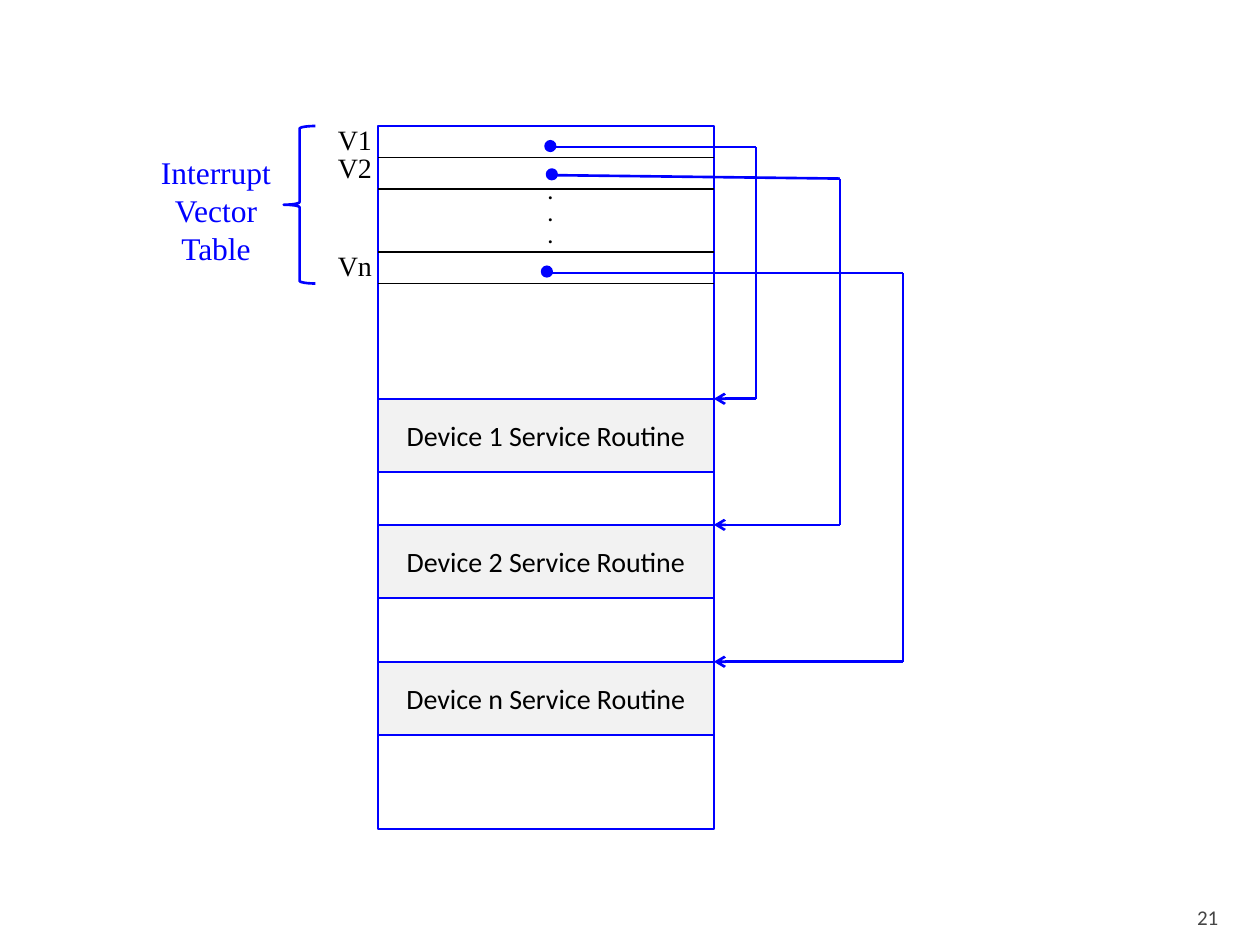
from lxml import etree
from pptx import Presentation
from pptx.dml.color import RGBColor
from pptx.enum.shapes import MSO_CONNECTOR, MSO_SHAPE
from pptx.enum.text import MSO_ANCHOR, MSO_AUTO_SIZE, PP_ALIGN
from pptx.oxml.ns import qn
from pptx.util import Cm, Pt

RECT, OVAL, BRACE = MSO_SHAPE.RECTANGLE, MSO_SHAPE.OVAL, MSO_SHAPE.LEFT_BRACE
STRAIGHT = MSO_CONNECTOR.STRAIGHT
LEFT, CENTER, RIGHT = PP_ALIGN.LEFT, PP_ALIGN.CENTER, PP_ALIGN.RIGHT
MIDDLE, BOTTOM = MSO_ANCHOR.MIDDLE, MSO_ANCHOR.BOTTOM
FIT = MSO_AUTO_SIZE.SHAPE_TO_FIT_TEXT

BLUE, BLACK, GREY, DARK = "0000FF", "000000", "F2F2F2", "454545"
SANS, SERIF = "Calibri", "Times New Roman"

MEM_X, MEM_Y, MEM_W, MEM_H = 7.62, 2.54, 6.77, 14.18
MEM_RIGHT = MEM_X + MEM_W
ROW_H = 0.635
ROUTINE_H = 1.48
DOT = 0.21

VECTORS = [
    ("1", 2.34, (10.99, 2.84), (11.0, 2.96), (15.24, 2.96), 8.04),
    ("2", 2.92, (11.02, 3.41), (11.1, 3.53), (16.93, 3.6), 10.58),
    ("n", 4.88, (10.92, 5.37), (11.0, 5.5), (18.2, 5.5), 13.34),
]


def color(hex_value):
    return RGBColor.from_string(hex_value)


def write(tf, lines, size, font, hex_value, align=LEFT, bold=False):
    for i, line in enumerate(lines):
        p = tf.paragraphs[0] if i == 0 else tf.add_paragraph()
        p.alignment = align
        r = p.add_run()
        r.text = line
        r.font.size = Pt(size)
        r.font.name = font
        r.font.bold = bold
        r.font.color.rgb = color(hex_value)


def add_label(s, x, y, w, h, lines, size, hex_value, align=LEFT, bold=False):
    tf = s.shapes.add_textbox(Cm(x), Cm(y), Cm(w), Cm(h)).text_frame
    tf.word_wrap = False
    tf.auto_size = FIT
    write(tf, lines, size, SERIF, hex_value, align, bold)


def add_block(s, kind, x, y, w, h, fill=None, width=1):
    sp = s.shapes.add_shape(kind, Cm(x), Cm(y), Cm(w), Cm(h))
    sp.shadow.inherit = False
    if fill:
        sp.fill.solid()
        sp.fill.fore_color.rgb = color(fill)
    else:
        sp.fill.background()
    sp.line.color.rgb = color(BLUE)
    sp.line.width = Pt(width)
    return sp


def add_line(s, start, end, hex_value=BLUE, width=1.5, arrow=False):
    points = [Cm(v) for v in (*start, *end)]
    c = s.shapes.add_connector(STRAIGHT, *points)
    c.line.color.rgb = color(hex_value)
    c.line.width = Pt(width)
    if arrow:
        ln = c.line._get_or_add_ln()
        etree.SubElement(ln, qn("a:tailEnd"), type="arrow")
    etree.SubElement(c._element.spPr, qn("a:effectLst"))


def add_routine(s, name, y):
    tf = add_block(s, RECT, MEM_X, y, MEM_W, ROUTINE_H, GREY).text_frame
    tf.vertical_anchor = MIDDLE
    write(tf, [f"Device {name} Service Routine"], 16, SANS, BLACK, CENTER)


def add_path(s, start, corner, target_y):
    turn = (corner[0], target_y)
    add_line(s, start, corner)
    add_line(s, corner, turn)
    add_line(s, turn, (MEM_RIGHT, target_y), arrow=True)


def add_page_number(s, number):
    tf = s.shapes.add_textbox(Cm(22.78), Cm(17.98), Cm(2.03), Cm(0.76)).text_frame
    tf.word_wrap = True
    tf.vertical_anchor = BOTTOM
    tf.margin_bottom = Cm(0)
    write(tf, [number], 12, SANS, DARK, RIGHT)


def main():
    prs = Presentation()
    prs.slide_width, prs.slide_height = Cm(25.4), Cm(19.05)
    s = prs.slides.add_slide(prs.slide_layouts[6])

    add_page_number(s, "21")
    add_block(s, RECT, MEM_X, MEM_Y, MEM_W, MEM_H)
    for row in (1, 2, 4, 5):
        y = MEM_Y + row * ROW_H
        add_line(s, (MEM_X, y), (MEM_RIGHT, y), BLACK, 1)
    add_label(s, 10.8, 3.53, 0.61, 1.6, [".", ".", "."], 10.5, BLACK, bold=True)

    for name, label_y, dot, start, corner, routine_y in VECTORS:
        add_label(s, 6.56, label_y, 1.22, 0.94, [f"V{name}"], 16, BLACK)
        add_routine(s, name, routine_y)
    for name, label_y, dot, start, corner, routine_y in VECTORS:
        add_path(s, start, corner, routine_y)
        add_block(s, OVAL, *dot, DOT, DOT, BLUE)

    add_block(s, BRACE, 5.72, MEM_Y, 0.64, 5 * ROW_H, width=1.5)
    add_label(s, 2.97, 2.97, 2.77, 2.57, ["Interrupt", "Vector", "Table"],
              18, BLUE, CENTER)
    prs.save("out.pptx")


if __name__ == "__main__":
    main()
